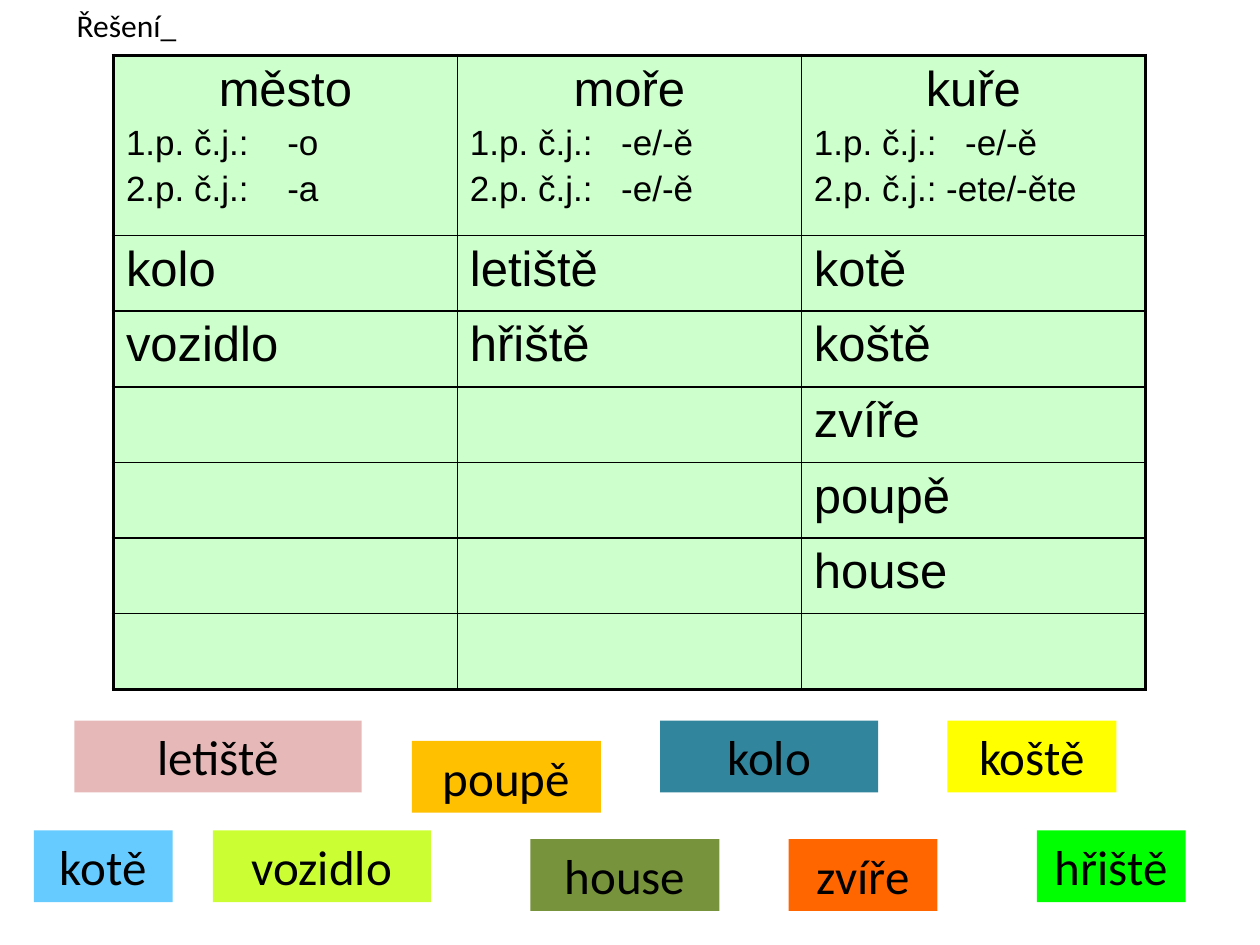
import pptx
import pptx.util
import pptx.dml.color
import pptx.enum.shapes
import pptx.enum.text
import pptx.oxml
import pptx.oxml.ns

Inches = pptx.util.Inches
Pt = pptx.util.Pt
CENTER = pptx.enum.text.PP_ALIGN.CENTER

COLORS = {
    "text": "000000", "border": "000000", "cell": "CCFFCC",
    "green": "00FF00", "yellow": "FFFF00", "pink": "E6B9B8",
    "teal": "31859C", "blue": "66CCFF", "orange": "FF6600",
    "olive": "77933C", "lime": "CCFF33", "amber": "FFC000",
}


def format_paragraph(paragraph, size, font_name):
    for run in paragraph.runs:
        run.font.size = Pt(size)
        run.font.name = font_name
        run.font.color.rgb = pptx.dml.color.RGBColor.from_string(COLORS["text"])


def add_border(cell, side, width):
    cell._tc.get_or_add_tcPr().append(pptx.oxml.parse_xml(
        f'<a:{side} {pptx.oxml.ns.nsdecls("a")} w="{Pt(width)}">'
        f'<a:solidFill><a:srgbClr val="{COLORS["border"]}"/></a:solidFill></a:{side}>'))


presentation = pptx.Presentation()
presentation.slide_width = Inches(10)
presentation.slide_height = Inches(7.5)
slide = presentation.slides.add_slide(presentation.slide_layouts[6])

word_cards = [
    ("hřiště", 8.23, 6.59, 1.18, "green"),
    ("koště", 7.52, 5.72, 1.34, "yellow"),
    ("letiště", 0.59, 5.72, 2.28, "pink"),
    ("kolo", 5.24, 5.72, 1.73, "teal"),
    ("kotě", 0.27, 6.59, 1.1, "blue"),
    ("zvíře", 6.26, 6.66, 1.18, "orange"),
    ("house", 4.21, 6.66, 1.5, "olive"),
    ("vozidlo", 1.69, 6.59, 1.73, "lime"),
    ("poupě", 3.27, 5.88, 1.5, "amber"),
]
for word, left, top, width, color in word_cards:
    card = slide.shapes.add_shape(
        pptx.enum.shapes.MSO_SHAPE.RECTANGLE,
        Inches(left), Inches(top), Inches(width), Inches(0.57))
    card.shadow.inherit = False
    card.fill.solid()
    card.fill.fore_color.rgb = pptx.dml.color.RGBColor.from_string(COLORS[color])
    card.line.fill.background()
    text_frame = card.text_frame
    text_frame.word_wrap = True
    text_frame.auto_size = pptx.enum.text.MSO_AUTO_SIZE.SHAPE_TO_FIT_TEXT
    text_frame.vertical_anchor = pptx.enum.text.MSO_ANCHOR.TOP
    text_frame.text = word
    text_frame.paragraphs[0].alignment = CENTER
    format_paragraph(text_frame.paragraphs[0], 28, "Calibri")

rows = [
    ["město\n1.p. č.j.:\t-o\n2.p. č.j.:\t-a",
     "moře\n1.p. č.j.:\t-e/-ě\n2.p. č.j.:\t-e/-ě",
     "kuře\n1.p. č.j.:\t-e/-ě\n2.p. č.j.: -ete/-ěte"],
    ["kolo", "letiště", "kotě"],
    ["vozidlo", "hřiště", "koště"],
    ["", "", "zvíře"],
    ["", "", "poupě"],
    ["", "", "house"],
    ["", "", ""],
]
ending_tabs = [1.28, 1.2, 1.2]
last_row, last_column = len(rows) - 1, len(ending_tabs) - 1
table = slide.shapes.add_table(
    len(rows), len(ending_tabs),
    Inches(0.9), Inches(0.44), Inches(8.19), Inches(5.03)).table
table.first_row = False
table.horz_banding = False
for column in table.columns:
    column.width = Inches(2.73)
for row_index, words in enumerate(rows):
    table.rows[row_index].height = Inches(0.6 if row_index else 1.43)
    for column_index, text in enumerate(words):
        cell = table.cell(row_index, column_index)
        outer_sides = {
            "lnL": column_index == 0, "lnR": column_index == last_column,
            "lnT": row_index == 0, "lnB": row_index == last_row,
        }
        for side, is_outer in outer_sides.items():
            add_border(cell, side, 2.25 if is_outer else 1)
        cell.fill.solid()
        cell.fill.fore_color.rgb = pptx.dml.color.RGBColor.from_string(COLORS["cell"])
        cell.text_frame.text = text
        for index, paragraph in enumerate(cell.text_frame.paragraphs):
            format_paragraph(paragraph, 20 if index else 28, "Arial")
            if index:
                paragraph.space_before = Pt(4)
                paragraph._p.get_or_add_pPr().append(pptx.oxml.parse_xml(
                    f'<a:tabLst {pptx.oxml.ns.nsdecls("a")}>'
                    f'<a:tab pos="{Inches(ending_tabs[column_index])}" algn="l"/></a:tabLst>'))
            elif row_index == 0:
                paragraph.alignment = CENTER

heading = slide.shapes.add_textbox(Inches(0.51), Inches(0), Inches(1.81), Inches(0.4))
heading.text_frame.word_wrap = True
heading.text_frame.auto_size = pptx.enum.text.MSO_AUTO_SIZE.SHAPE_TO_FIT_TEXT
heading.text_frame.text = "Řešení_"
format_paragraph(heading.text_frame.paragraphs[0], 18, "Calibri")

presentation.save("out.pptx")
